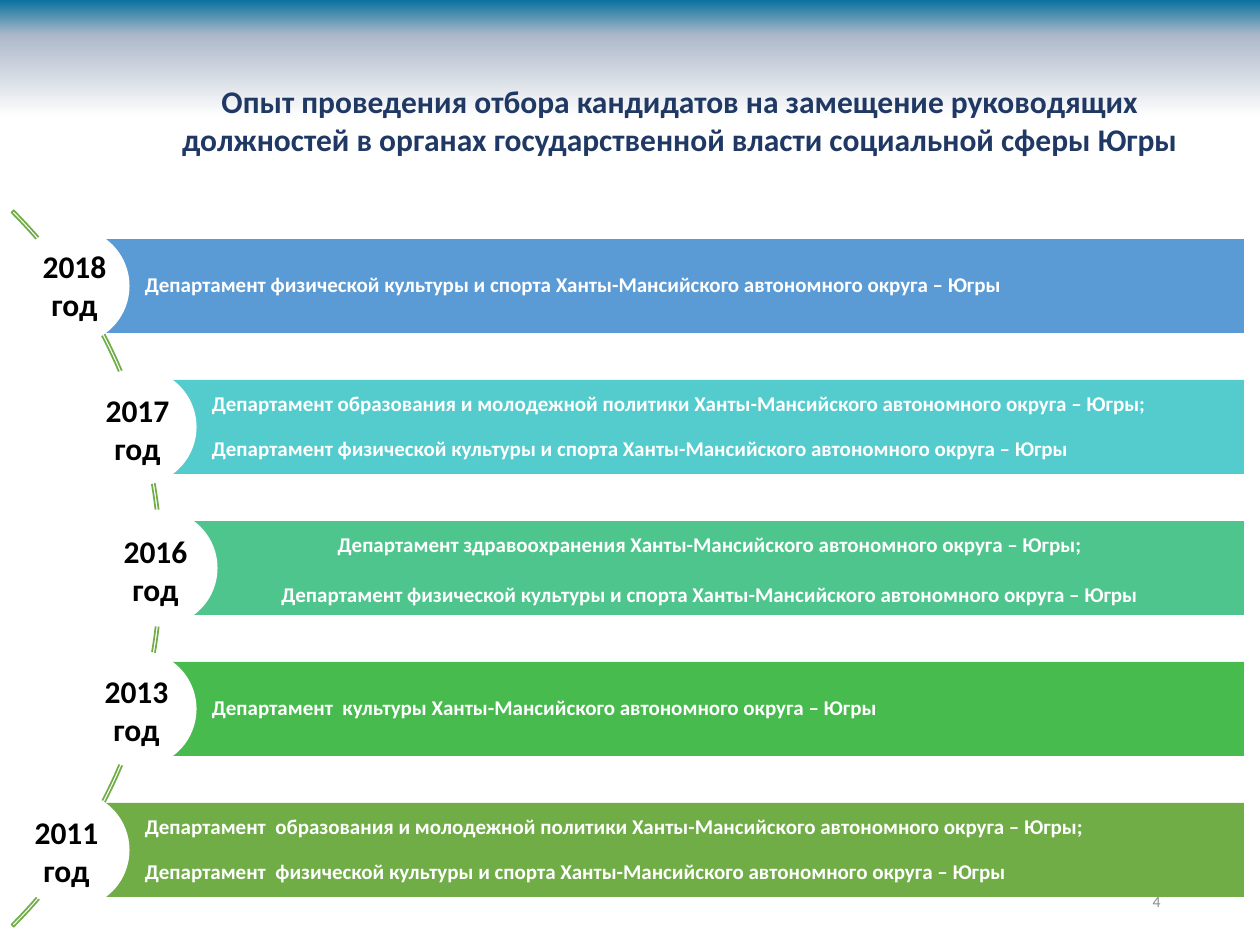
from copy import deepcopy

from pptx import Presentation
from pptx.dml.color import RGBColor
from pptx.enum.shapes import MSO_SHAPE as SHAPE
from pptx.enum.text import MSO_ANCHOR as ANCHOR, MSO_AUTO_SIZE as AUTO, PP_ALIGN as ALIGN
from pptx.oxml.ns import qn
from pptx.util import Emu, Pt

SCALE = 914400 / 126  # EMU per px

WHITE = RGBColor(0xFF, 0xFF, 0xFF)
BLACK = RGBColor(0x00, 0x00, 0x00)
NAVY = RGBColor(0x20, 0x38, 0x64)
GRAY = RGBColor(0x8C, 0x8C, 0x8C)
TEAL = RGBColor(0x09, 0x72, 0x9F)
MIST = RGBColor(0xAD, 0xB9, 0xCA)
BLUE = RGBColor(0x5B, 0x9B, 0xD5)
AQUA = RGBColor(0x54, 0xCC, 0xCD)
MINT = RGBColor(0x4D, 0xC5, 0x8D)
GREEN = RGBColor(0x48, 0xBB, 0x4F)
OLIVE = RGBColor(0x70, 0xAD, 0x47)

TITLE = ("Опыт проведения отбора кандидатов на замещение руководящих "
         "должностей в органах государственной власти социальной сферы Югры")
REGION = "Ханты-Мансийского автономного округа – Югры"
SPORT = f"физической культуры и спорта {REGION}"
YOUTH = f"образования и молодежной политики {REGION};"

# year, colour, bar left, (label left, label top offset), departments
ROWS = [
    ("2018", BLUE, 71, (13, 2), [f"Департамент {SPORT}"]),
    ("2017", AQUA, 138, (76, 5), [f"Департамент {YOUTH}", f"Департамент {SPORT}"]),
    ("2016", MINT, 159, (94, 5), [f"Департамент здравоохранения {REGION};",
                                  f"Департамент {SPORT}"]),
    ("2013", GREEN, 138, (75, 4), [f"Департамент  культуры {REGION}"]),
    ("2011", OLIVE, 71, (5, 4), [f"Департамент  {YOUTH}", f"Департамент  {SPORT}"]),
]
ROW_TOP, ROW_PITCH, BAR_H, BAR_RIGHT = 239, 141, 94, 1244
CIRCLE = 117
CENTERED_YEAR = "2016"

TITLE_FONT = {"size": Pt(18), "bold": True}
DEPT_FONT = {"size": Pt(12), "bold": True}


def px(*lengths):
    return [Emu(round(n * SCALE)) for n in lengths]


def add_shape(slide, kind, box, fill=None):
    sp = slide.shapes.add_shape(kind, *px(*box))
    sp.shadow.inherit = False
    sp.line.fill.background()
    if fill is None:
        sp.fill.background()
    else:
        sp.fill.solid()
        sp.fill.fore_color.rgb = fill
    return sp


def write(sp, lines, font, color, align, frame=None, spacing=1.0, gap=0):
    tf = sp.text_frame
    settings = {"word_wrap": True, "auto_size": AUTO.NONE, "vertical_anchor": ANCHOR.TOP}
    for name, value in {**settings, **(frame or {})}.items():
        setattr(tf, name, value)
    for i, line in enumerate(lines):
        p = tf.add_paragraph() if i else tf.paragraphs[0]
        p.alignment, p.line_spacing = align, spacing
        p.space_before = Pt(gap if i else 0)
        r = p.add_run()
        r.text = line
        r.font.name = "Calibri"
        r.font.color.rgb = color
        for name, value in font.items():
            setattr(r.font, name, value)


def add_text(slide, box, *args, **kwargs):
    write(slide.shapes.add_textbox(*px(*box)), *args, **kwargs)


def add_header(slide, box):
    x, y, w, h = box
    # Gradient band, kept behind the title
    band = add_shape(slide, SHAPE.RECTANGLE, box)
    band.fill.gradient()
    band.fill.gradient_angle = 270
    stops = band._element.spPr.find(".//" + qn("a:gsLst"))
    stops.insert(1, deepcopy(stops[0]))
    for stop, (pos, color) in zip(band.fill.gradient_stops,
                                  [(0, TEAL), (0.3, MIST), (1, WHITE)]):
        stop.position = pos
        stop.color.rgb = color
    slide.shapes._spTree.insert(2, band._element)

    # Title
    title = slide.shapes.title
    title.left, title.top, title.width, title.height = px(x + 164, y + 76, 1032, 89)
    write(title, [TITLE], TITLE_FONT, NAVY, ALIGN.CENTER)


def add_arc(slide, box):
    arc = add_shape(slide, SHAPE.BLOCK_ARC, box)
    for i, value in enumerate((189, 27, 0.003)):
        arc.adjustments[i] = value
    arc.line.color.rgb = OLIVE
    arc.line.width = Pt(1)


def add_row(slide, box, year, color, label, departments):
    x, y, w, h = box
    bar = add_shape(slide, SHAPE.RECTANGLE, box, color)

    # Circle centred on the left edge of the bar
    circle = (x - CIRCLE / 2, y + (h - CIRCLE) / 2, CIRCLE, CIRCLE)
    add_shape(slide, SHAPE.OVAL, circle, WHITE)

    # Departments
    if year == CENTERED_YEAR:
        add_text(slide, (x + 25, y + 4, 1052, 89), departments, DEPT_FONT, WHITE,
                 ALIGN.CENTER, gap=14.6)
    else:
        sides = ("margin_left", "margin_top", "margin_right", "margin_bottom")
        frame = dict(zip(sides, px(74, 4, 4, 4)), vertical_anchor=ANCHOR.MIDDLE)
        write(bar, departments, DEPT_FONT, WHITE, ALIGN.LEFT, frame, spacing=0.9, gap=13)

    # Year
    left, drop = label
    add_text(slide, (left, y + drop, 123, 89), [f"{year} год"], TITLE_FONT, BLACK,
             ALIGN.CENTER)


def add_timeline(slide, top):
    add_arc(slide, (-851, top - 177, 1013, 1013))
    for i, (year, color, left, label, departments) in enumerate(ROWS):
        box = (left, top + i * ROW_PITCH, BAR_RIGHT - left, BAR_H)
        add_row(slide, box, year, color, label, departments)


def main():
    prs = Presentation()
    prs.slide_width, prs.slide_height = px(1260, 945)
    slide = prs.slides.add_slide(prs.slide_layouts[5])
    add_header(slide, (0, 0, 1260, 118))
    # Page number
    add_text(slide, (890, 876, 283, 50), ["4"], {"size": Pt(9)}, GRAY, ALIGN.RIGHT,
             {"vertical_anchor": ANCHOR.MIDDLE})
    add_timeline(slide, ROW_TOP)
    prs.save("out.pptx")


if __name__ == "__main__":
    main()
